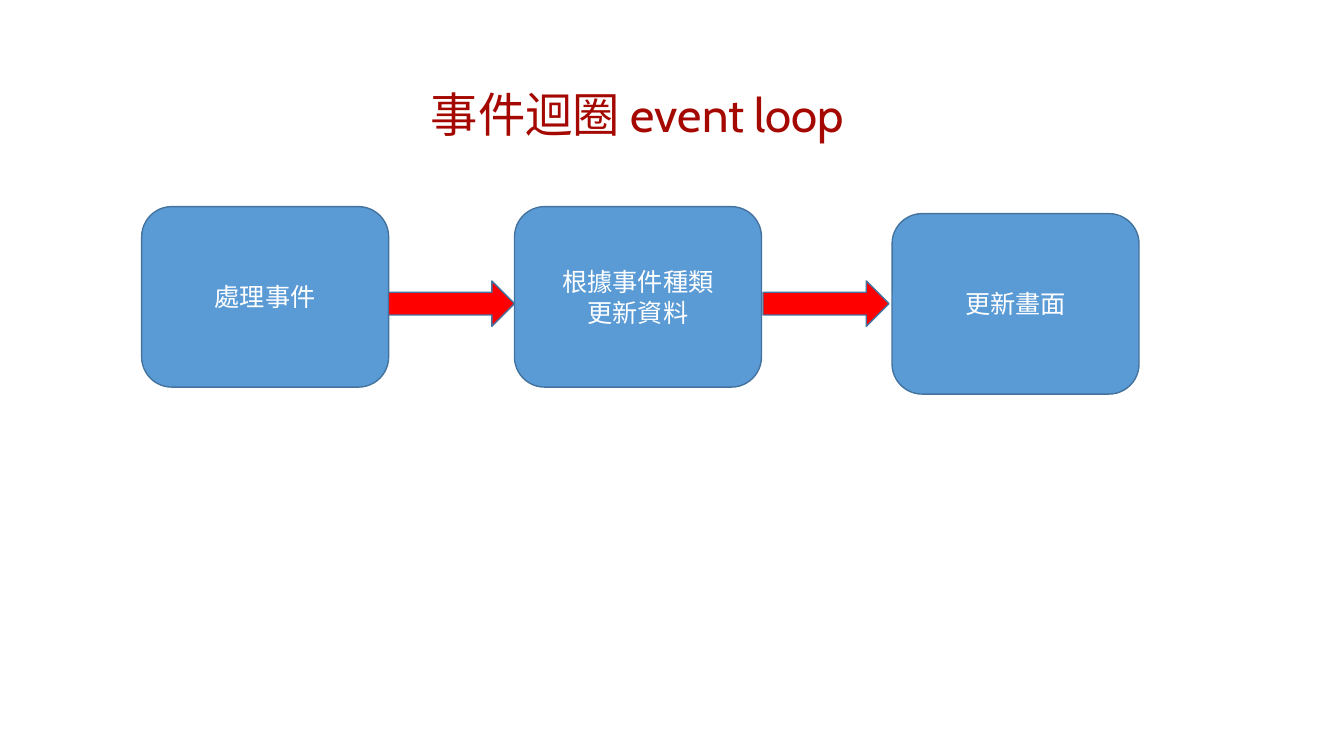
from pptx import Presentation
from pptx.dml.color import RGBColor
from pptx.enum import shapes, text
from pptx.util import Pt


def color(value):
    return RGBColor.from_string(value)


def write(frame, content, *, size, font, fill, anchor, inset=None):
    """Fill a text frame with centred text, one paragraph per line."""
    frame.text = content
    frame.word_wrap = True
    frame.auto_size = text.MSO_AUTO_SIZE.NONE
    frame.vertical_anchor = anchor
    if inset is not None:
        frame.margin_left = frame.margin_right = Pt(inset)
        frame.margin_top = frame.margin_bottom = Pt(inset)
    for paragraph in frame.paragraphs:
        paragraph.alignment = text.PP_ALIGN.CENTER
        paragraph.font.size = Pt(size)
        paragraph.font.name = font
        paragraph.font.color.rgb = color(fill)


class FlowSlide:
    title_color = "A40800"
    box_fill = "5B9BD5"
    arrow_fill = "FF0000"
    outline = "43739E"
    box_size = (176.4, 128.9)
    arrow_size = (90, 32.4)

    def __init__(self, presentation):
        self.slide = presentation.slides.add_slide(presentation.slide_layouts[5])

    def title(self, content):
        title = self.slide.shapes.title
        title.left, title.top = Pt(172.8), Pt(61.2)
        title.width, title.height = Pt(565.2), Pt(40.3)
        write(title.text_frame, content, size=33.8, font="Cabin",
              fill=self.title_color, anchor=text.MSO_ANCHOR.TOP, inset=0)

    def shape(self, kind, left, top, size, fill):
        width, height = size
        shape = self.slide.shapes.add_shape(
            kind, Pt(left), Pt(top), Pt(width), Pt(height))
        shape.shadow.inherit = False
        shape.fill.solid()
        shape.fill.fore_color.rgb = color(fill)
        shape.line.color.rgb = color(self.outline)
        shape.line.width = Pt(1)
        return shape

    def step(self, content, left, top):
        box = self.shape(shapes.MSO_SHAPE.ROUNDED_RECTANGLE, left, top,
                         self.box_size, self.box_fill)
        write(box.text_frame, content, size=18, font="Calibri",
              fill="FFFFFF", anchor=text.MSO_ANCHOR.MIDDLE)

    def arrow(self, left, top):
        self.shape(shapes.MSO_SHAPE.RIGHT_ARROW, left, top,
                   self.arrow_size, self.arrow_fill)


def main():
    presentation = Presentation()
    presentation.slide_width, presentation.slide_height = Pt(960), Pt(540)
    flow = FlowSlide(presentation)
    flow.title("事件迴圈 event loop")
    for content, left, top in (
        ("處理事件", 101.2, 147.6),
        ("根據事件種類\n更新資料", 367.5, 147.6),
        ("更新畫面", 637.2, 152.6),
    ):
        flow.step(content, left, top)
    for left in (277.5, 545):
        flow.arrow(left, 200.7)
    presentation.save("out.pptx")


if __name__ == "__main__":
    main()
